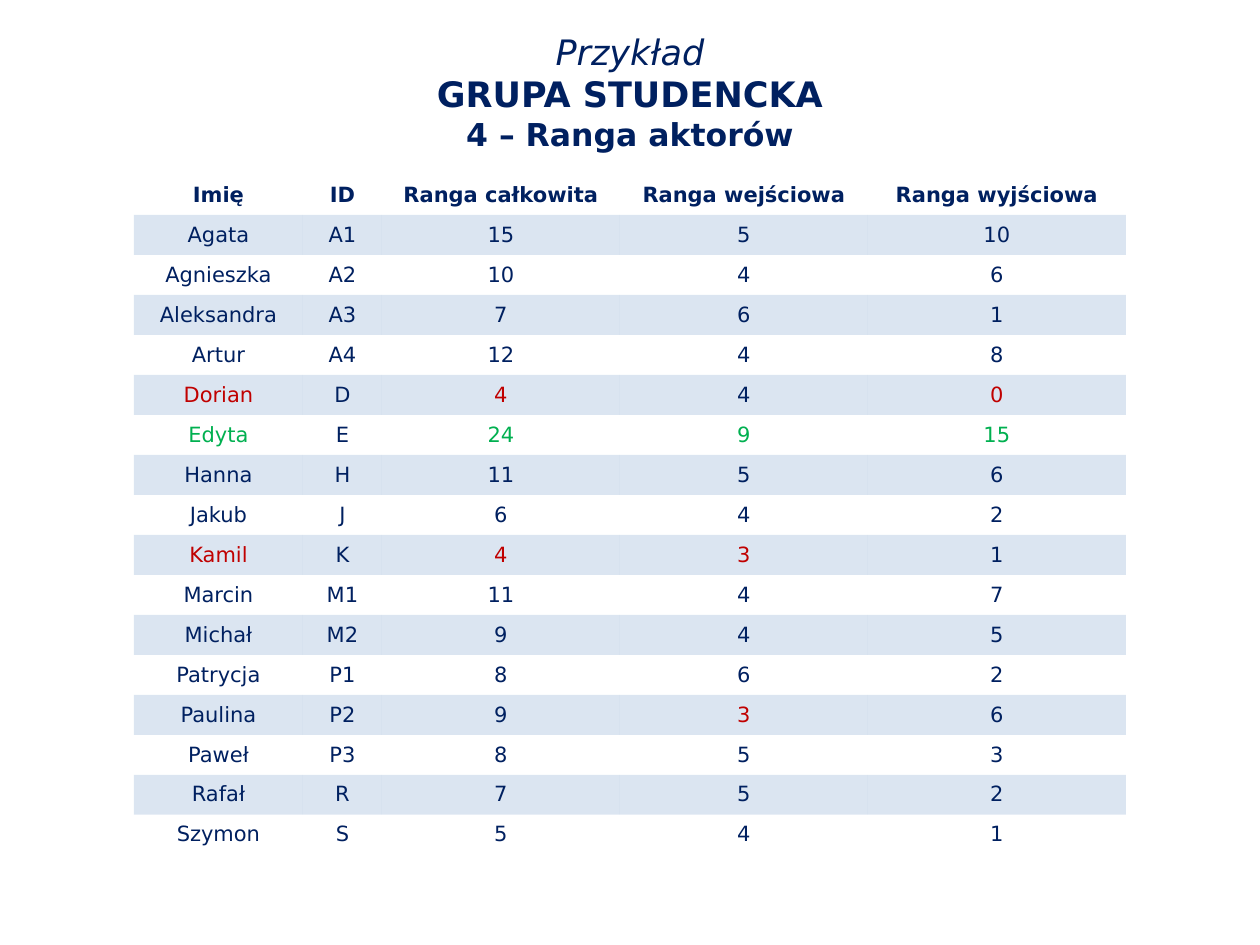
import pptx
import pptx.dml.color
import pptx.enum.text
import pptx.oxml.ns
import pptx.util
from lxml import etree

PX = 914400 // 126
FONT = "DejaVu Sans"
NO_STYLE = "{2D5ABB26-0587-4C30-8999-92F81FD0307C}"
COLORS = {"text": "002060", "band": "4F81BD", "lowest": "C00000", "highest": "00B050"}
BAND_ALPHA = 20

TITLE = [("Przykład", 20, False), ("GRUPA STUDENCKA", 20, True), ("4 – Ranga aktorów", 18, True)]
HEADER = ["Imię", "ID", "Ranga całkowita", "Ranga wejściowa", "Ranga wyjściowa"]
COL_WIDTHS = [169, 79, 238, 248, 258]
ACTORS = [
    ("Agata", "A1", 15, 5, 10),
    ("Agnieszka", "A2", 10, 4, 6),
    ("Aleksandra", "A3", 7, 6, 1),
    ("Artur", "A4", 12, 4, 8),
    ("Dorian", "D", 4, 4, 0),
    ("Edyta", "E", 24, 9, 15),
    ("Hanna", "H", 11, 5, 6),
    ("Jakub", "J", 6, 4, 2),
    ("Kamil", "K", 4, 3, 1),
    ("Marcin", "M1", 11, 4, 7),
    ("Michał", "M2", 9, 4, 5),
    ("Patrycja", "P1", 8, 6, 2),
    ("Paulina", "P2", 9, 3, 6),
    ("Paweł", "P3", 8, 5, 3),
    ("Rafał", "R", 7, 5, 2),
    ("Szymon", "S", 5, 4, 1),
]


def px(n):
    return pptx.util.Emu(n * PX)


def rgb(name):
    return pptx.dml.color.RGBColor.from_string(COLORS[name])


def set_font(font, size, bold, color="text"):
    font.name, font.size, font.bold = FONT, pptx.util.Pt(size), bold
    font.color.rgb = rgb(color)


def add_title(s, x, y, w, h):
    tf = s.shapes.add_textbox(px(x), px(y), px(w), px(h)).text_frame
    tf.word_wrap = True
    tf.vertical_anchor = pptx.enum.text.MSO_ANCHOR.MIDDLE
    p = tf.paragraphs[0]
    p.alignment = pptx.enum.text.PP_ALIGN.CENTER
    for i, (text, size, bold) in enumerate(TITLE):
        if i:
            p.add_line_break()
        r = p.add_run()
        r.text = text
        set_font(r.font, size, bold)
        r.font.italic = not bold


def rank_color(row, col):
    """Mark the extremes of each rank; a name follows the total rank."""
    if col == 1:
        return "text"
    col = col or 2
    ranks = [actor[col] for actor in ACTORS]
    return {min(ranks): "lowest", max(ranks): "highest"}.get(row[col], "text")


def fill_cell(cell, text, bold, color, banded):
    cell.margin_left = cell.margin_right = px(4)
    cell.margin_top = cell.margin_bottom = px(2)
    cell.vertical_anchor = pptx.enum.text.MSO_ANCHOR.MIDDLE
    p = cell.text_frame.paragraphs[0]
    p.alignment = pptx.enum.text.PP_ALIGN.CENTER
    r = p.add_run()
    r.text = str(text)
    set_font(r.font, 12, bold, color)
    if not banded:
        cell.fill.background()
        return
    cell.fill.solid()
    cell.fill.fore_color.rgb = rgb("band")
    # Translucent band
    qn = pptx.oxml.ns.qn
    clr = cell._tc.tcPr.find(qn("a:solidFill")).find(qn("a:srgbClr"))
    etree.SubElement(clr, qn("a:alpha")).set("val", str(BAND_ALPHA * 1000))


def add_rank_table(s, x, y, row_h):
    rows = [HEADER] + ACTORS
    frame = s.shapes.add_table(len(rows), len(HEADER), px(x), px(y),
                               px(sum(COL_WIDTHS)), px(row_h * len(rows)))
    table = frame.table
    table.horz_banding = False
    table._tbl.tblPr.find(pptx.oxml.ns.qn("a:tableStyleId")).text = NO_STYLE
    for column, width in zip(table.columns, COL_WIDTHS):
        column.width = px(width)
    for i, row in enumerate(rows):
        table.rows[i].height = px(row_h)
        for j, value in enumerate(row):
            color = rank_color(row, j) if i else "text"
            fill_cell(table.cell(i, j), value, i == 0, color, i % 2 == 1)


def main():
    prs = pptx.Presentation()
    prs.slide_width, prs.slide_height = px(1260), px(945)
    s = prs.slides.add_slide(prs.slide_layouts[6])
    add_title(s, 0, 19, 1260, 145)
    add_rank_table(s, 134, 175, 40)
    prs.save("out.pptx")


if __name__ == "__main__":
    main()
